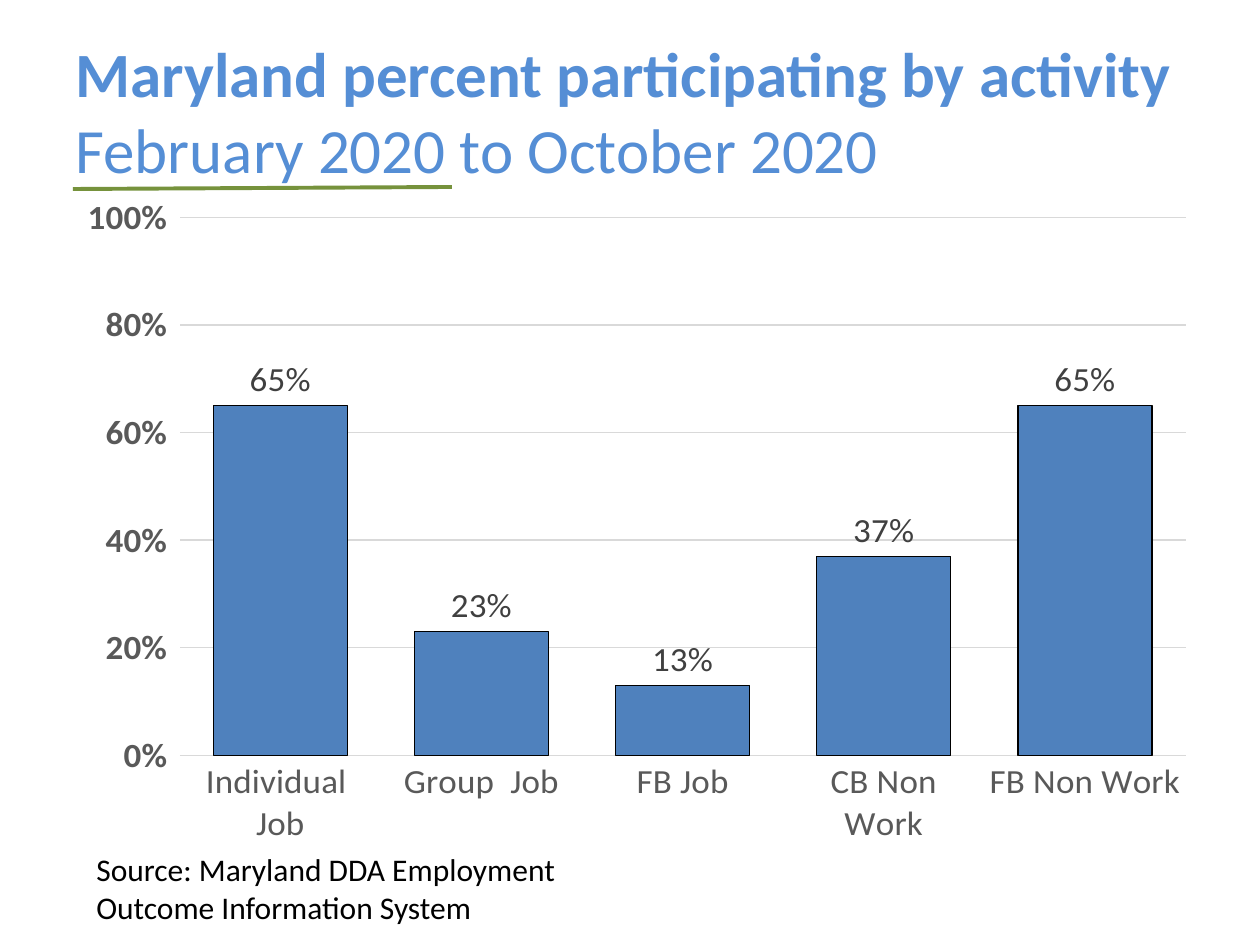
import pptx
import pptx.chart.data
import pptx.dml.color
import pptx.enum.chart
import pptx.enum.shapes
import pptx.enum.text
import pptx.oxml
import pptx.oxml.ns
import pptx.util
from dataclasses import dataclass

EMU_PER_PX = 914400 / 126


@dataclass(frozen=True)
class Theme:
    font: str = "Calibri"
    title: str = "558ED5"
    rule: str = "76923C"
    bar: str = "4F81BD"
    ink: str = "000000"
    axis: str = "595959"
    label: str = "404040"
    grid: str = "D9D9D9"
    title_size: int = 36
    chart_size: int = 20
    source_size: int = 18


THEME = Theme()

ACTIVITIES = {
    "Individual  Job": 0.65,
    "Group  Job": 0.23,
    "FB Job": 0.13,
    "CB Non Work": 0.37,
    "FB Non Work": 0.65,
}


def px(*lengths):
    return [pptx.util.Emu(round(n * EMU_PER_PX)) for n in lengths]


def rgb(code):
    return pptx.dml.color.RGBColor.from_string(code)


def set_attributes(target, **values):
    for name, value in values.items():
        setattr(target, name, value)


def style_font(font, size, color, bold=False):
    set_attributes(font, name=THEME.font, size=pptx.util.Pt(size), bold=bold)
    font.color.rgb = rgb(color)


def style_line(line, color, width):
    line.color.rgb = rgb(color)
    line.width = pptx.util.Pt(width)


def write_lines(frame, lines, size, color, anchor):
    """Write (text, bold) lines as one paragraph with line breaks."""
    set_attributes(frame, word_wrap=True, vertical_anchor=anchor,
                   auto_size=pptx.enum.text.MSO_AUTO_SIZE.NONE)
    paragraph = frame.paragraphs[0]
    paragraph.alignment = pptx.enum.text.PP_ALIGN.LEFT
    for index, (text, bold) in enumerate(lines):
        if index:
            paragraph.add_line_break()
        run = paragraph.add_run()
        run.text = text
        style_font(run.font, size, color, bold)


def add_title(slide, box, lines):
    title = slide.shapes.title
    left, top, width, height = px(*box)
    set_attributes(title, left=left, top=top, width=width, height=height)
    write_lines(title.text_frame, lines, THEME.title_size, THEME.title,
                pptx.enum.text.MSO_ANCHOR.MIDDLE)


def add_source(slide, box, lines):
    source = slide.shapes.add_textbox(*px(*box))
    write_lines(source.text_frame, lines, THEME.source_size, THEME.ink,
                pptx.enum.text.MSO_ANCHOR.TOP)


def add_rule(slide, ends):
    rule = slide.shapes.add_connector(
        pptx.enum.shapes.MSO_CONNECTOR.STRAIGHT, *px(*ends))
    style_line(rule.line, THEME.rule, 2.25)
    rule._element.spPr.append(pptx.oxml.parse_xml(
        f'<a:effectLst {pptx.oxml.ns.nsdecls("a")}/>'))


def place_plot(chart, **fractions):
    """Fix the inner plot area as fractions of the chart."""
    modes = '<c:xMode val="edge"/><c:yMode val="edge"/>'
    sizes = "".join(f'<c:{k} val="{v}"/>' for k, v in fractions.items())
    layout = pptx.oxml.parse_xml(
        f'<c:layout {pptx.oxml.ns.nsdecls("c")}><c:manualLayout>'
        f'<c:layoutTarget val="inner"/>{modes}{sizes}'
        '</c:manualLayout></c:layout>')
    plot_area = chart._chartSpace.chart.plotArea
    for old in plot_area.findall(pptx.oxml.ns.qn("c:layout")):
        plot_area.remove(old)
    plot_area.insert(0, layout)


def style_axes(chart):
    tick = pptx.enum.chart.XL_TICK_MARK
    # Activities
    activity_axis = chart.category_axis
    set_attributes(activity_axis, major_tick_mark=tick.NONE,
                   minor_tick_mark=tick.NONE, has_major_gridlines=False)
    style_line(activity_axis.format.line, THEME.grid, 0.75)
    style_font(activity_axis.tick_labels.font, THEME.chart_size, THEME.axis)
    # Percent participating
    percent_axis = chart.value_axis
    set_attributes(percent_axis, minimum_scale=0, maximum_scale=1,
                   major_unit=0.2, has_major_gridlines=True,
                   major_tick_mark=tick.OUTSIDE, minor_tick_mark=tick.NONE)
    percent_axis.format.line.fill.background()
    style_line(percent_axis.major_gridlines.format.line, THEME.grid, 0.75)
    set_attributes(percent_axis.tick_labels, number_format="0%",
                   number_format_is_linked=False)
    style_font(percent_axis.tick_labels.font, THEME.chart_size, THEME.axis,
               bold=True)


def add_activity_chart(slide, box):
    data = pptx.chart.data.CategoryChartData(number_format="0%")
    data.categories = list(ACTIVITIES)
    data.add_series("Series 1", list(ACTIVITIES.values()))
    chart = slide.shapes.add_chart(
        pptx.enum.chart.XL_CHART_TYPE.COLUMN_CLUSTERED, *px(*box), data).chart
    set_attributes(chart, has_title=False, has_legend=False)
    style_font(chart.font, THEME.chart_size, THEME.ink)
    place_plot(chart, x=0.103, y=0.099, w=0.887, h=0.804)
    style_axes(chart)

    # Bars and their labels
    plot = chart.plots[0]
    set_attributes(plot, gap_width=50, vary_by_categories=False)
    bars = plot.series[0]
    bars.format.fill.solid()
    bars.format.fill.fore_color.rgb = rgb(THEME.bar)
    style_line(bars.format.line, THEME.ink, 0.75)
    labels = bars.data_labels
    set_attributes(labels, show_value=True, number_format="0%",
                   number_format_is_linked=False,
                   position=pptx.enum.chart.XL_LABEL_POSITION.OUTSIDE_END)
    style_font(labels.font, THEME.chart_size, THEME.label)


def main():
    deck = pptx.Presentation()
    deck.slide_width, deck.slide_height = px(1260, 945)
    slide = deck.slides.add_slide(deck.slide_layouts[5])

    add_title(slide, (63, 42, 1166, 137), [
        ("Maryland percent participating by activity", True),
        ("February 2020 to October 2020", False)])
    add_activity_chart(slide, (63, 151, 1134, 693))
    add_rule(slide, (73, 189, 452, 187))
    add_source(slide, (84, 844, 892, 89), [
        ("Source: Maryland DDA Employment", False),
        ("Outcome Information System", False)])

    deck.save("out.pptx")


if __name__ == "__main__":
    main()
